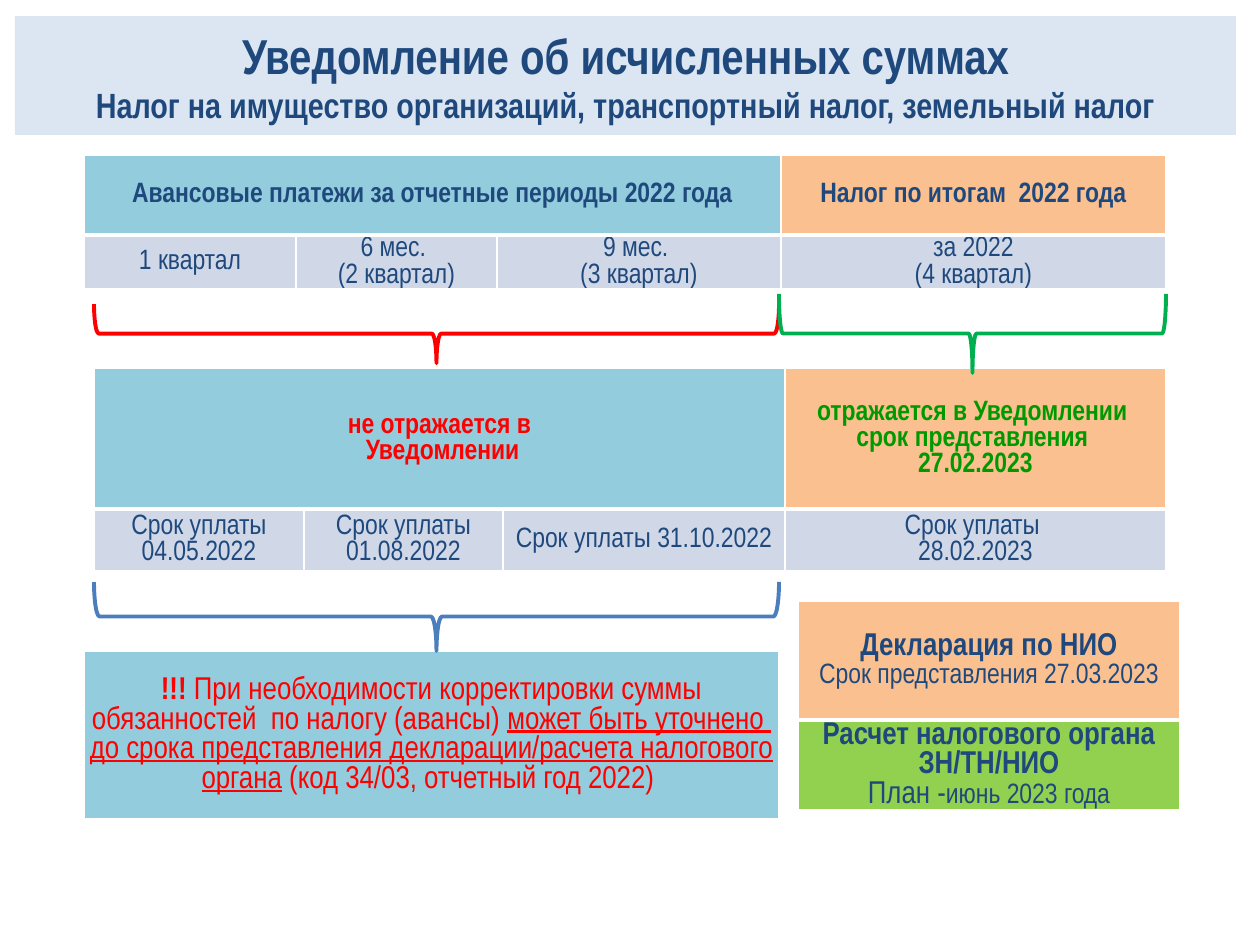
"""Build the slide on the notice of assessed tax sums."""
from copy import deepcopy

from lxml import etree
from pptx import Presentation
from pptx.dml.color import RGBColor
from pptx.enum.shapes import MSO_SHAPE
from pptx.enum.text import MSO_ANCHOR, MSO_AUTO_SIZE, PP_ALIGN
from pptx.oxml.ns import qn
from pptx.util import Emu, Inches, Pt

BRACE = MSO_SHAPE.LEFT_BRACE
MIDDLE = MSO_ANCHOR.MIDDLE
CENTER = PP_ALIGN.CENTER
FIXED = MSO_AUTO_SIZE.NONE
PX = Inches(1) / 126

NAVY = RGBColor(0x1F, 0x49, 0x7D)
RED = RGBColor(0xFF, 0x00, 0x00)
GREEN = RGBColor(0x00, 0x99, 0x00)
LEAF = RGBColor(0x00, 0xB0, 0x50)
BLUE = RGBColor(0x4B, 0x7E, 0xBC)
PALE = RGBColor(0xDC, 0xE6, 0xF2)
TEAL = RGBColor(0x93, 0xCD, 0xDD)
PEACH = RGBColor(0xFA, 0xC0, 0x90)
GREY = RGBColor(0xD0, 0xD8, 0xE8)
LIME = RGBColor(0x92, 0xD0, 0x50)

BASE = {"name": "Arial Narrow", "size": Pt(16), "bold": False, "underline": False}
PLAIN = {"color": NAVY}
BOLD = {"color": NAVY, "bold": True}
BIG = {"color": NAVY, "size": Pt(18)}
HEAD = {**BIG, "bold": True}
NOTE = {"color": RED, "size": Pt(18)}
MARK = {**NOTE, "underline": True}

TITLE_BOX = (15, 16, 1221, 119)
TITLE = [[
    ("Уведомление об исчисленных суммах\n", {**BOLD, "size": Pt(28)}),
    ("Налог на имущество организаций, транспортный налог, земельный налог",
     {**BOLD, "size": Pt(20)}),
]]


def line(text, form=PLAIN):
    return [[(text, form)]]


TABLES = [
    {"at": (84, 155), "cols": (212, 201, 284, 385), "rows": (80, 54), "cells": [
        [(TEAL, line("Авансовые платежи за отчетные периоды 2022 года", BOLD), 3),
         (PEACH, line("Налог по итогам  2022 года", BOLD), 1)],
        [(GREY, line("1 квартал"), 1),
         (GREY, line("6 мес. \n(2 квартал)"), 1),
         (GREY, line("9 мес. \n(3 квартал)"), 1),
         (GREY, line("\u00a0за 2022 \n(4 квартал)"), 1)],
    ]},
    {"at": (94, 368), "cols": (210, 199, 282, 381), "rows": (141, 62), "cells": [
        [(TEAL, line("не отражается в\n Уведомлении", {"color": RED, "bold": True}), 3),
         (PEACH, line("отражается в Уведомлении \nсрок представления \n27.02.2023",
                      {"color": GREEN, "bold": True}), 1)],
        [(GREY, line("Срок уплаты 04.05.2022"), 1),
         (GREY, line("Срок уплаты 01.08.2022"), 1),
         (GREY, line("Срок уплаты 31.10.2022"), 1),
         (GREY, line("Срок уплаты \n28.02.2023"), 1)],
    ]},
    {"at": (84, 651), "cols": (695,), "rows": (169,), "cells": [
        [(TEAL, [
            [("!!! ", {**NOTE, "bold": True}),
             ("При необходимости корректировки суммы обязанностей  по налогу (авансы) ",
              NOTE),
             ("может быть уточнено ", MARK)],
            [("до срока представления декларации/расчета налогового органа", MARK),
             (" (код 34/03, отчетный год 2022) ", NOTE)],
        ], 1)],
    ]},
    {"at": (798, 601), "cols": (382,), "rows": (119, 90), "cells": [
        [(PEACH, [[("Декларация по НИО", HEAD)],
                  [("Срок представления 27.03.2023", PLAIN)]], 1)],
        [(LIME, [[("Расчет налогового органа ЗН/ТН/НИО\n", HEAD),
                  ("План -", BIG), ("июнь 2023 года", PLAIN)]], 1)],
    ]},
]

BRACES = [
    ((94, 304, 685, 59), (0.08, 0.5), RED),
    ((779, 294, 387, 79), (0.05, 0.5), LEAF),
    ((94, 582, 685, 69), (0.08, 0.5), BLUE),
]


def px(*vals):
    return [Emu(round(v * PX)) for v in vals]


def write(frame, paras):
    frame.word_wrap = True
    for i, runs in enumerate(paras):
        para = frame.add_paragraph() if i else frame.paragraphs[0]
        para.alignment = CENTER
        for text, form in runs:
            look = {**BASE, **form}
            color = look.pop("color")
            for j, part in enumerate(text.split("\n")):
                if j:
                    para.add_line_break()
                    para._p[-1].append(deepcopy(run._r.rPr))
                if not part:
                    continue
                run = para.add_run()
                run.text = part
                for key, val in look.items():
                    setattr(run.font, key, val)
                run.font.color.rgb = color


def edge(cell, low):
    props = cell._tc.get_or_add_tcPr()
    for i, (tag, width) in enumerate(
            (("a:lnL", 1), ("a:lnR", 1), ("a:lnT", 1), ("a:lnB", low))):
        rim = etree.Element(qn(tag), w=str(Pt(width)))
        fill = etree.SubElement(rim, qn("a:solidFill"))
        etree.SubElement(fill, qn("a:srgbClr"), val="FFFFFF")
        props.insert(i, rim)


def add_grid(slide, data):
    cols, rows = data["cols"], data["rows"]
    grid = slide.shapes.add_table(
        len(rows), len(cols), *px(*data["at"], sum(cols), sum(rows))).table
    for col, width in zip(grid.columns, px(*cols)):
        col.width = width
    for row, height in zip(grid.rows, px(*rows)):
        row.height = height
    for r, items in enumerate(data["cells"]):
        c = 0
        for fill, paras, span in items:
            cell = grid.cell(r, c)
            if span > 1:
                cell.merge(grid.cell(r, c + span - 1))
            for k in range(c, c + span):
                part = grid.cell(r, k)
                part.fill.solid()
                part.fill.fore_color.rgb = fill
                edge(part, 1 if r else 3)
            for side in ("left", "top", "right"):
                setattr(cell, "margin_" + side, Inches(0.01))
            cell.margin_bottom = 0
            cell.vertical_anchor = MIDDLE
            write(cell.text_frame, paras)
            c += span


def add_brace(slide, box, bend, color):
    x, y, w, h = box
    shape = slide.shapes.add_shape(
        BRACE, *px(x + (w - h) / 2, y + (h - w) / 2, h, w))
    shape.rotation = 270
    shape.shadow.inherit = False
    shape.fill.background()
    shape.line.color.rgb = color
    shape.line.width = Pt(2.25)
    for i, val in enumerate(bend):
        shape.adjustments[i] = val


def main():
    deck = Presentation()
    deck.slide_width, deck.slide_height = Inches(10), Inches(7.5)
    slide = deck.slides.add_slide(deck.slide_layouts[5])
    title = slide.shapes.title
    title.left, title.top, title.width, title.height = px(*TITLE_BOX)
    title.fill.solid()
    title.fill.fore_color.rgb = PALE
    title.text_frame.auto_size = FIXED
    title.text_frame.vertical_anchor = MIDDLE
    write(title.text_frame, TITLE)
    for data in TABLES:
        add_grid(slide, data)
    for brace in BRACES:
        add_brace(slide, *brace)
    deck.save("out.pptx")


if __name__ == "__main__":
    main()
